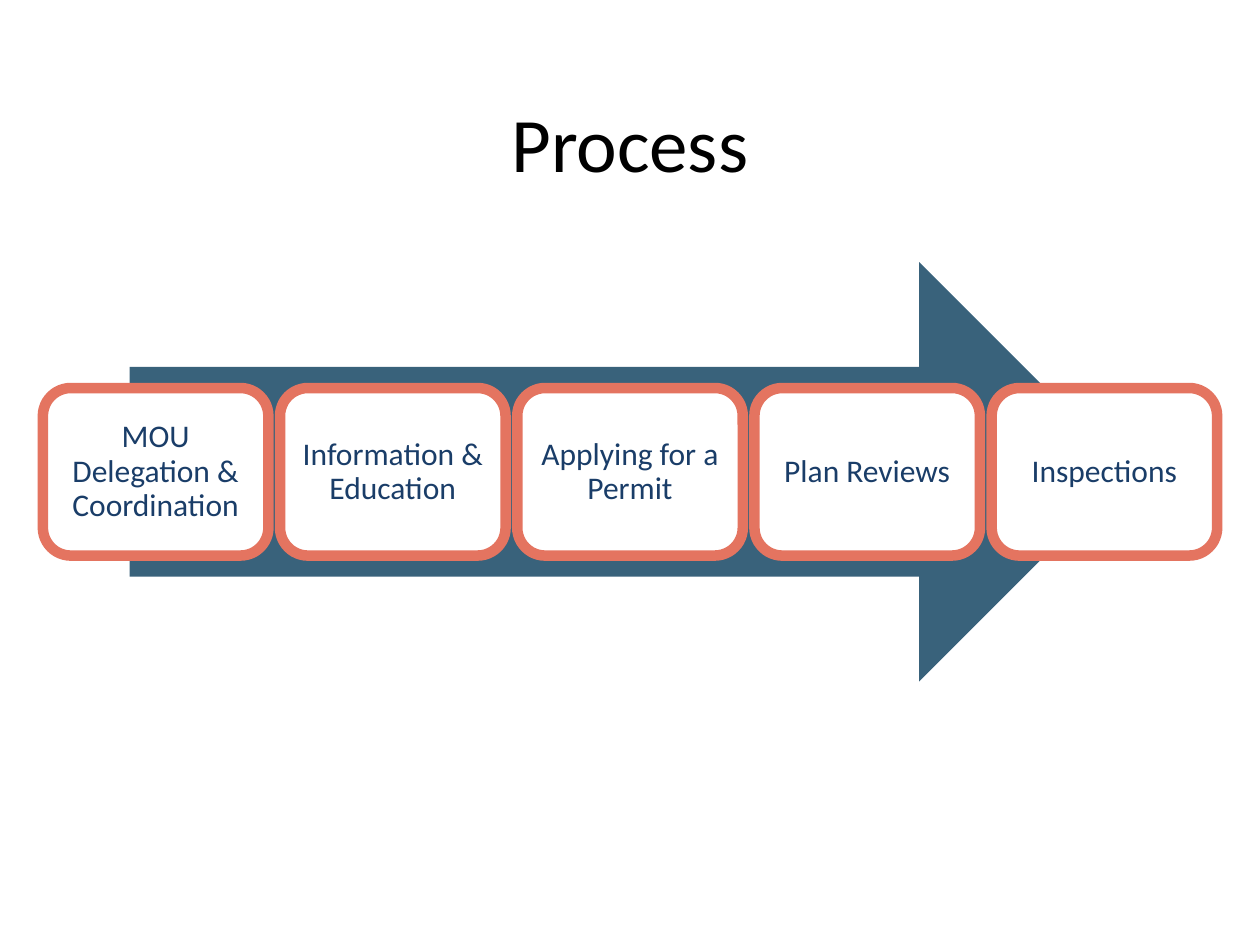
from dataclasses import dataclass

from pptx import Presentation
from pptx.dml.color import RGBColor
from pptx.enum.shapes import MSO_SHAPE
from pptx.enum.text import MSO_ANCHOR, PP_ALIGN
from pptx.util import Inches, Pt

COLORS = {
    "title": "000000",
    "arrow": "39627B",
    "card": "FFFFFF",
    "edge": "E47460",
    "label": "1A3D68",
}
STEPS = [
    "MOU Delegation & Coordination",
    "Information & Education",
    "Applying for a Permit",
    "Plan Reviews",
    "Inspections",
]
LEFT, PITCH = 0.34, 1.8825


@dataclass
class Box:
    left: float
    top: float
    width: float
    height: float

    def place(self) -> tuple:
        return tuple(map(Inches, (self.left, self.top, self.width, self.height)))


def color(name: str) -> RGBColor:
    return RGBColor.from_string(COLORS[name])


def add_block(slide, kind: MSO_SHAPE, box: Box, fill: str):
    block = slide.shapes.add_shape(kind, *box.place())
    block.shadow.inherit = False
    block.fill.solid()
    block.fill.fore_color.rgb = color(fill)
    block.line.fill.background()
    return block


def write(shape, text: str, size: int, ink: str, inset: float, spacing: float) -> None:
    frame = shape.text_frame
    frame.word_wrap = True
    frame.vertical_anchor = MSO_ANCHOR.MIDDLE
    frame.margin_left = frame.margin_right = Inches(inset)
    frame.margin_top = frame.margin_bottom = Inches(inset)
    para = frame.paragraphs[0]
    para.text = text
    para.alignment = PP_ALIGN.CENTER
    para.line_spacing = spacing
    para.font.name = "Calibri"
    para.font.size = Pt(size)
    para.font.color.rgb = color(ink)


def add_step(slide, box: Box, text: str) -> None:
    card = add_block(slide, MSO_SHAPE.ROUNDED_RECTANGLE, box, "card")
    card.line.color.rgb = color("edge")
    card.line.width = Pt(6)
    write(card, text, 18, "label", inset=0.07, spacing=0.9)


def main() -> None:
    deck = Presentation()
    deck.slide_width, deck.slide_height = Inches(10), Inches(7.5)
    slide = deck.slides.add_slide(deck.slide_layouts[6])

    title = slide.shapes.add_textbox(*Box(0.5, 0.75, 9, 0.75).place())
    write(title, "Process", 44, "title", inset=0.05, spacing=1.0)

    add_block(slide, MSO_SHAPE.RIGHT_ARROW, Box(1.03, 2.08, 7.93, 3.33), "arrow")
    for i, text in enumerate(STEPS):
        add_step(slide, Box(LEFT + i * PITCH, 3.08, 1.79, 1.33), text)

    deck.save("out.pptx")


if __name__ == "__main__":
    main()
